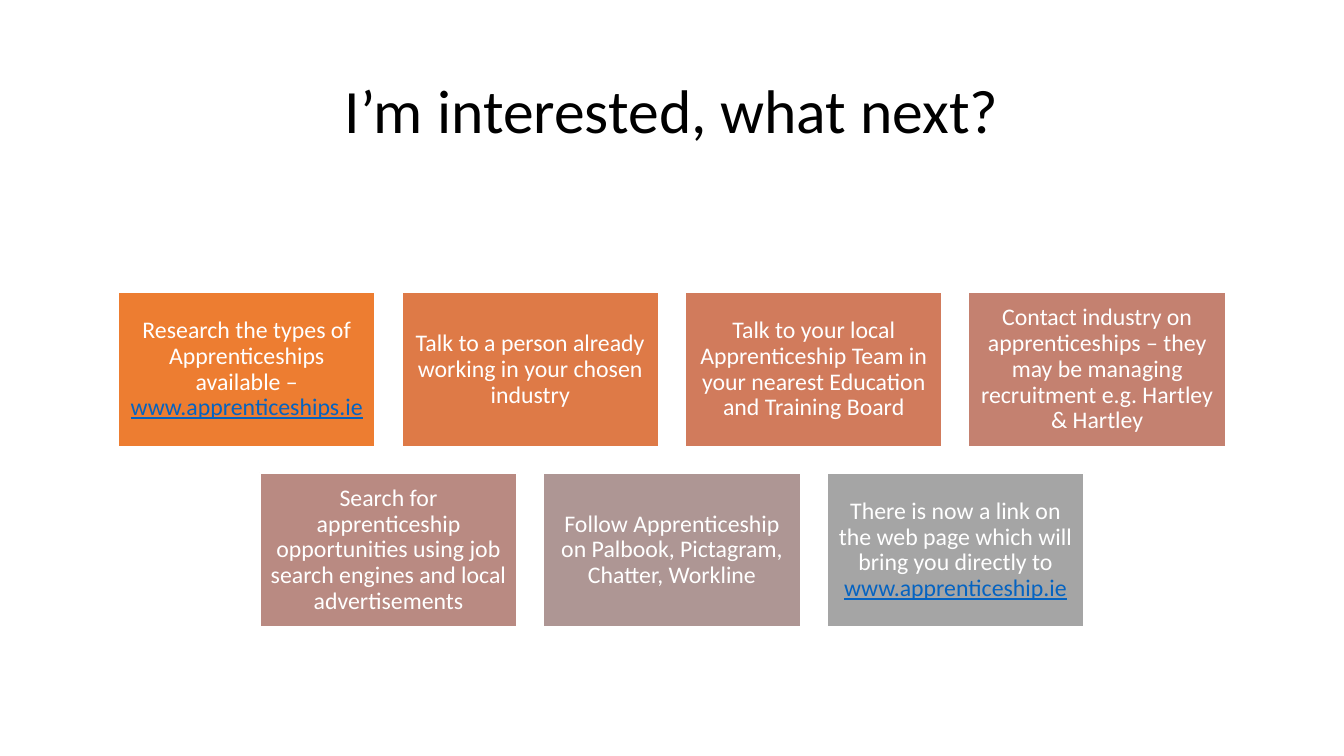
from pptx import Presentation
from pptx.dml.color import RGBColor as Rgb
from pptx.enum.shapes import MSO_SHAPE as Kind
from pptx.enum.text import MSO_ANCHOR as Anchor, PP_ALIGN as Align
from pptx.util import Pt

WIDE, HIGH = 960, 540
HUES = {"ink": "000000", "white": "FFFFFF", "link": "0563C1"}

# Rows of steps: fill, text, web address
ROWS = [
    [
        ("ED7D31", "Research the types of Apprenticeships available – ",
         "www.apprenticeships.ie"),
        ("DE7A47", "Talk to a person already working in your chosen industry", ""),
        ("D17B5C", "Talk to your local Apprenticeship Team in your nearest "
                   "Education and Training Board", ""),
        ("C48170", "Contact industry on apprenticeships – they may be managing "
                   "recruitment e.g. Hartley & Hartley", ""),
    ],
    [
        ("B98A82", "Search for apprenticeship opportunities using job search "
                   "engines and local advertisements", ""),
        ("AE9694", "Follow Apprenticeship on Palbook, Pictagram, Chatter, "
                   "Workline", ""),
        ("A5A5A5", "There is now a link on the web page which will bring you "
                   "directly to ", "www.apprenticeship.ie"),
    ],
]


def write(para, text, size=17, hue="white", line=False):
    """Add one formatted run to a paragraph."""
    run = para.add_run()
    run.text = text
    font = run.font
    font.name, font.size, font.underline = "Calibri", Pt(size), line
    font.color.rgb = Rgb.from_string(HUES[hue])


class Deck:
    """Holds the style and the current slide."""
    box_w, box_h = 184, 110.4
    step_x, step_y = 202.5, 129
    top, inset = 208.8, 5

    def __init__(self):
        self.prs = Presentation()
        self.prs.slide_width, self.prs.slide_height = Pt(WIDE), Pt(HIGH)
        self.slide = self.prs.slides.add_slide(self.prs.slide_layouts[5])

    def frame(self, shape, inset):
        """Centre the text of a shape and return its paragraph."""
        body = shape.text_frame
        body.word_wrap, body.vertical_anchor = True, Anchor.MIDDLE
        body.margin_left = body.margin_right = Pt(inset)
        body.margin_top = body.margin_bottom = Pt(inset)
        para = body.paragraphs[0]
        para.alignment, para.line_spacing = Align.CENTER, 0.9
        return para

    def title(self, text):
        head = self.slide.shapes.title
        head.left, head.top = Pt(66), Pt(28.8)
        head.width, head.height = Pt(828), Pt(104.4)
        write(self.frame(head, self.inset), text, size=44, hue="ink")

    def box(self, left, top, fill, text, link):
        card = self.slide.shapes.add_shape(
            Kind.RECTANGLE, Pt(left), Pt(top), Pt(self.box_w), Pt(self.box_h))
        card.shadow.inherit = False
        card.fill.solid()
        card.fill.fore_color.rgb = Rgb.from_string(fill)
        card.line.color.rgb = Rgb.from_string(HUES["white"])
        card.line.width = Pt(1.5)
        para = self.frame(card, self.inset)
        write(para, text)
        if link:
            write(para, link, hue="link", line=True)

    def grid(self, rows):
        """Lay out each row centred on the slide."""
        for r, row in enumerate(rows):
            span = (len(row) - 1) * self.step_x + self.box_w
            left = (WIDE - span) / 2
            for c, step in enumerate(row):
                self.box(left + c * self.step_x, self.top + r * self.step_y, *step)


def main():
    deck = Deck()
    # Heading
    deck.title("I’m interested, what next?")
    # Steps
    deck.grid(ROWS)
    deck.prs.save("out.pptx")


if __name__ == "__main__":
    main()
